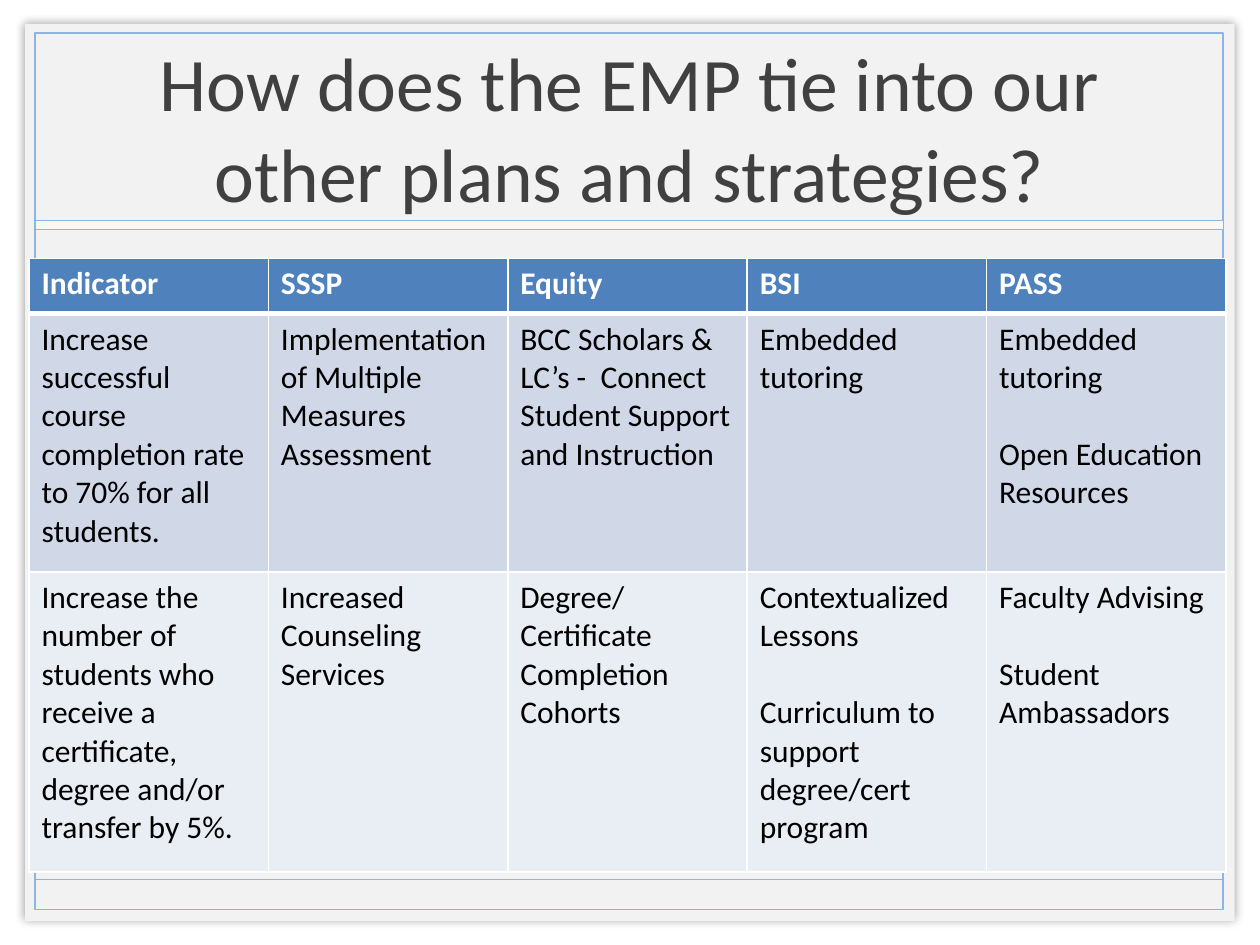
from lxml import etree
from pptx import Presentation
from pptx.dml.color import RGBColor
from pptx.enum.shapes import MSO_CONNECTOR, MSO_SHAPE
from pptx.enum.text import MSO_ANCHOR, PP_ALIGN
from pptx.oxml.ns import qn
from pptx.util import Inches, Pt

RECTANGLE = MSO_SHAPE.RECTANGLE
STRAIGHT = MSO_CONNECTOR.STRAIGHT
CENTER, LEFT = PP_ALIGN.CENTER, PP_ALIGN.LEFT
MIDDLE = MSO_ANCHOR.MIDDLE

FONT = "Calibri"
COLORS = {
    "panel": "F2F2F2", "frame": "8EB4E3", "band": "F8F7F3", "title": "404040",
    "white": "FFFFFF", "black": "000000", "header": "4F81BD",
    "row_dark": "D0D8E8", "row_light": "E9EDF4",
}

# Table content: each cell is a list of paragraphs
HEADINGS = ["Indicator", "SSSP", "Equity", "BSI", "PASS"]
ROWS = [
    [["Increase successful course completion rate to 70% for all students."],
     ["Implementation of Multiple Measures Assessment"],
     ["BCC Scholars & LC’s -  Connect Student Support and Instruction"],
     ["Embedded tutoring"],
     ["Embedded tutoring", "Open Education Resources"]],
    [["Increase the number of students who receive a certificate, degree and/or transfer by 5%."],
     ["Increased Counseling Services"],
     ["Degree/Certificate Completion", "Cohorts"],
     ["Contextualized Lessons", "Curriculum to support degree/cert program"],
     ["Faculty Advising", "Student Ambassadors"]],
]
TIGHT_CELLS = {"Degree/Certificate Completion"}  # no gap between paragraphs
ROW_HEIGHTS = [0.44, 2.05, 2.38]
COLUMN_WIDTH = 1.9


def rgb(name):
    return RGBColor.from_string(COLORS[name])


def add_color(parent, name, alpha=None):
    color = etree.SubElement(parent, qn("a:srgbClr"), val=COLORS[name])
    if alpha is not None:
        etree.SubElement(color, qn("a:alpha"), val=str(alpha * 1000))


class PageBuilder:
    """Holds the style and the current slide."""

    def __init__(self, page, font):
        self.page = page
        self.font = font

    def add_text(self, para, text, size, color, bold=False, align=LEFT):
        para.alignment = align
        span = para.add_run()
        span.text = text
        formats = {"name": self.font, "size": Pt(size), "bold": bold}
        for key, value in formats.items():
            setattr(span.font, key, value)
        span.font.color.rgb = rgb(color)

    def rectangle(self, left, top, width, height, fill=None, line=None, weight=1):
        box = self.page.shapes.add_shape(
            RECTANGLE, Inches(left), Inches(top), Inches(width), Inches(height))
        box.shadow.inherit = False
        if fill:
            box.fill.solid()
            box.fill.fore_color.rgb = rgb(fill)
        else:
            box.fill.background()
        if line:
            box.line.color.rgb = rgb(line)
            box.line.width = Pt(weight)
        else:
            box.line.fill.background()
        return box

    def glow_shadow(self, box, blur, alpha):
        effects = box._element.spPr.find(qn("a:effectLst"))
        shadow = etree.SubElement(effects, qn("a:outerShdw"),
                                  blurRad=str(Pt(blur)), dist="0", dir="0")
        add_color(shadow, "black", alpha)

    def rule(self, left, right, top, color):
        line = self.page.shapes.add_connector(
            STRAIGHT, Inches(left), Inches(top), Inches(right), Inches(top))
        line.line.color.rgb = rgb(color)
        line.line.width = Pt(1)
        etree.SubElement(line._element.spPr, qn("a:effectLst"))

    def title(self, left, top, width, height, text):
        box = self.page.shapes.add_textbox(
            Inches(left), Inches(top), Inches(width), Inches(height))
        frame = box.text_frame
        frame.word_wrap = True
        frame.vertical_anchor = MIDDLE
        self.add_text(frame.paragraphs[0], text, 43.2, "title", align=CENTER)

    def style_cell(self, cell, fill, top=1, bottom=1):
        props = cell._tc.get_or_add_tcPr()
        for side, weight in {"L": 1, "R": 1, "T": top, "B": bottom}.items():
            border = etree.SubElement(props, qn("a:ln" + side), w=str(Pt(weight)))
            add_color(etree.SubElement(border, qn("a:solidFill")), "white")
        cell.fill.solid()
        cell.fill.fore_color.rgb = rgb(fill)

    def fill_cell(self, cell, texts, color, bold=False):
        gap = 0 if texts[0] in TIGHT_CELLS else 22
        frame = cell.text_frame
        for index, text in enumerate(texts):
            para = frame.add_paragraph() if index else frame.paragraphs[0]
            if index:
                para.space_before = Pt(gap)
            self.add_text(para, text, 18, color, bold)

    def table(self, left, top, headings, rows):
        width = COLUMN_WIDTH * len(headings)
        table = self.page.shapes.add_table(
            len(rows) + 1, len(headings), Inches(left), Inches(top),
            Inches(width), Inches(sum(ROW_HEIGHTS))).table
        for column in table.columns:
            column.width = Inches(COLUMN_WIDTH)
        for row, height in zip(table.rows, ROW_HEIGHTS):
            row.height = Inches(height)
        for index, heading in enumerate(headings):
            cell = table.cell(0, index)
            self.style_cell(cell, "header", bottom=3)
            self.fill_cell(cell, [heading], "white", bold=True)
        for number, row in enumerate(rows, start=1):
            fill = "row_dark" if number % 2 else "row_light"
            for index, texts in enumerate(row):
                cell = table.cell(number, index)
                self.style_cell(cell, fill, top=3 if number == 1 else 1)
                self.fill_cell(cell, texts, "black")


def main():
    deck = Presentation()
    deck.slide_width, deck.slide_height = Inches(10), Inches(7.5)
    builder = PageBuilder(deck.slides.add_slide(deck.slide_layouts[6]), FONT)

    # Panel with frame, footer rule and title band
    panel = builder.rectangle(0.2, 0.19, 9.6, 7.12, fill="panel")
    builder.glow_shadow(panel, blur=5, alpha=40)
    builder.rectangle(0.28, 0.26, 9.43, 6.96, line="frame")
    builder.rule(0.28, 9.71, 6.98, "frame")
    builder.rectangle(0.28, 1.75, 9.43, 0.07, fill="band", line="frame", weight=0.25)

    # Title and table
    builder.title(0.98, 0.27, 8.03, 1.47,
                  "How does the EMP tie into our other plans and strategies?")
    builder.table(0.23, 2.05, HEADINGS, ROWS)

    deck.save("out.pptx")


if __name__ == "__main__":
    main()
